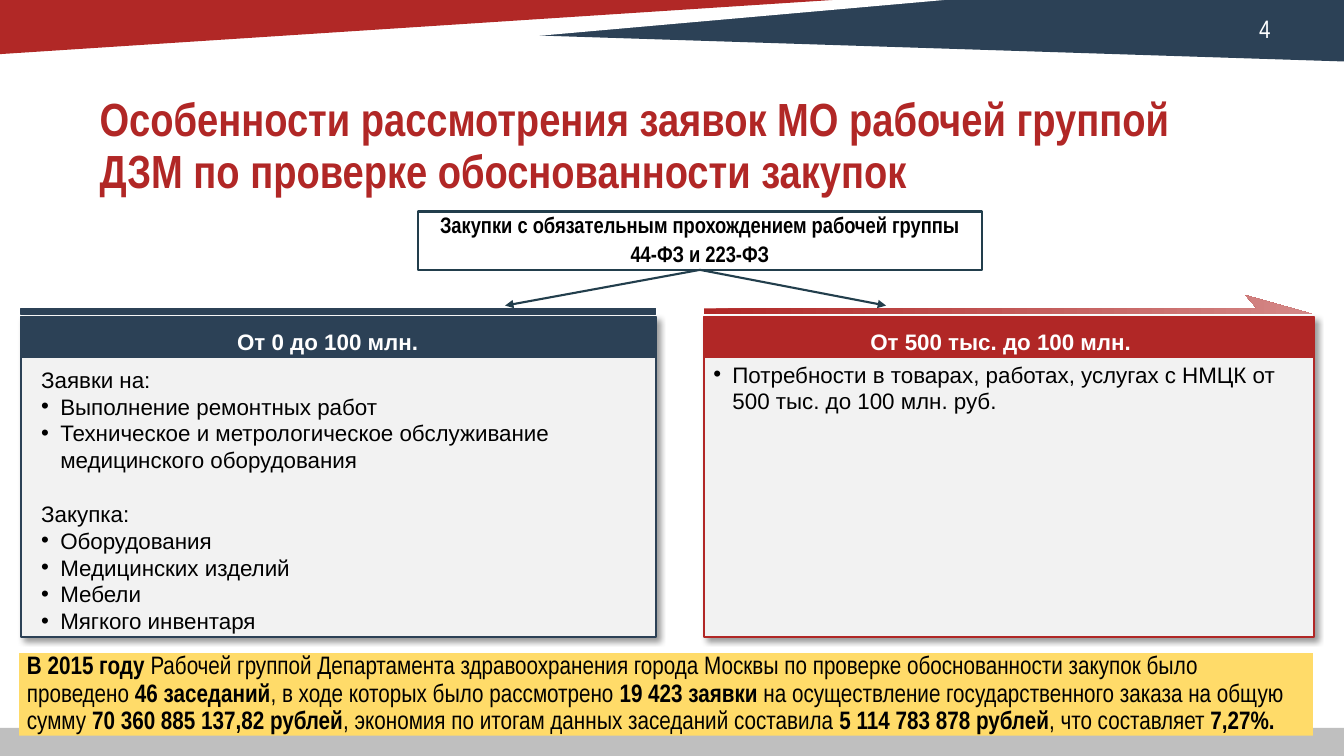
"""Build the slide on how the working group reviews purchase requests."""
from lxml.etree import SubElement
from pptx import Presentation
from pptx.dml.color import RGBColor
from pptx.enum.shapes import MSO_CONNECTOR, MSO_SHAPE
from pptx.enum.text import MSO_ANCHOR, PP_ALIGN
from pptx.oxml.ns import qn
from pptx.util import Cm, Pt

NAVY, RED, INK = "2C4156", "B12726", "223E4C"
WHITE, BLACK, PALE = "FFFFFF", "000000", "F2F2F2"
WIDE, HIGH = 33.87, 19.05

BANDS = [
    (NAVY, [(33.87, -0.13), (33.87, 1.55), (10.29, 0.79), (4.93, -0.13)]),
    (WHITE, [(-0.08, -0.1), (-0.08, 2.11), (24.94, -0.1)]),
    (WHITE, [(-0.13, -0.13), (-0.05, 2.21), (21.23, -0.1)]),
    ("B12826", [(-0.08, -0.1), (-0.08, 1.37), (22.53, -0.1)]),
]
TITLE = "Особенности рассмотрения заявок МО рабочей группой ДЗМ по проверке обоснованности закупок"
ROOT = ["Закупки с обязательным прохождением рабочей группы", "44-ФЗ и 223-ФЗ"]
PANELS = [
    {"x": 0.53, "w": 16, "color": NAVY, "head": "От 0 до 100 млн.",
     "text": (0.79, 14.94), "body": (0.79, 9.09, 15.32, 7.09), "pad": (0.25, 0.13),
     "groups": [
         ("Заявки на:", ["Выполнение ремонтных работ",
                         "Техническое и метрологическое обслуживание медицинского оборудования"]),
         ("Закупка:", ["Оборудования", "Медицинских изделий", "Мебели", "Мягкого инвентаря"])]},
    {"x": 17.75, "w": 15.37, "color": RED, "head": "От 500 тыс. до 100 млн.",
     "text": (17.98, 14.48), "body": (17.98, 9.09, 14.48, 1.37), "pad": (0, 0),
     "groups": [("", ["Потребности в товарах, работах, услугах с НМЦК от 500 тыс. до 100 млн. руб."])]},
]
FLAG = [(17.73, 7.77), (17.73, 7.92), (33.1, 7.92), (31.39, 7.44), (31.67, 7.77)]
TIPS = [(12.73, 7.7), (22.33, 7.7)]
TOTAL = [
    ("В 2015 году", True),
    (" Рабочей группой Департамента здравоохранения города Москвы по проверке "
     "обоснованности закупок было проведено ", False),
    ("46 заседаний", True),
    (", в ходе которых было рассмотрено ", False),
    ("19 423 заявки", True),
    (" на осуществление государственного заказа на общую сумму ", False),
    ("70 360 885 137,82 рублей", True),
    (", экономия по итогам данных заседаний составила ", False),
    ("5 114 783 878 рублей", True),
    (", что составляет ", False),
    ("7,27%.", True),
]


def tint(code):
    return RGBColor.from_string(code)


def paint(shape, fill, line=None, width=1.5):
    shape.shadow.inherit = False
    shape.fill.solid()
    shape.fill.fore_color.rgb = tint(fill)
    if line:
        shape.line.color.rgb = tint(line)
        shape.line.width = Pt(width)
    else:
        shape.line.fill.background()
    return shape


def rect(slide, x, y, w, h, *look):
    shape = slide.shapes.add_shape(MSO_SHAPE.RECTANGLE, Cm(x), Cm(y), Cm(w), Cm(h))
    return paint(shape, *look)


def outline(slide, points, fill):
    spots = [(Cm(x), Cm(y)) for x, y in points]
    maker = slide.shapes.build_freeform(*spots[0])
    maker.add_line_segments(spots[1:], close=True)
    return paint(maker.convert_to_shape(), fill)


def frame(shape, across=0, down=0):
    area = shape.text_frame
    area.word_wrap = True
    area.vertical_anchor = MSO_ANCHOR.TOP
    area.margin_left = area.margin_right = Cm(across)
    area.margin_top = area.margin_bottom = Cm(down)
    return area


def style(para, size, face, color, bold=False, align=PP_ALIGN.LEFT):
    para.alignment = align
    for run in para.runs:
        font = run.font
        font.size, font.name, font.bold = Pt(size), face, bold
        font.color.rgb = tint(color)


def label(slide, place, text, *look):
    box = slide.shapes.add_textbox(*[Cm(n) for n in place])
    area = frame(box)
    area.text = text
    style(area.paragraphs[0], *look)
    return area.paragraphs[0]


def shade(shape):
    drop = SubElement(shape.shadow._element.find(qn("a:effectLst")), qn("a:outerShdw"),
                      blurRad=str(Pt(4)), dist=str(Pt(3)), dir="2700000",
                      algn="tl", rotWithShape="0")
    color = SubElement(drop, qn("a:srgbClr"), val=BLACK)
    SubElement(color, qn("a:alpha"), val="40000")


def bullet(para):
    props = para._p.get_or_add_pPr()
    props.set("marL", str(Cm(0.48)))
    props.set("indent", str(-Cm(0.48)))
    SubElement(props, qn("a:buFont"), typeface="Arial")
    SubElement(props, qn("a:buChar"), char="•")


def fill_body(slide, panel):
    box = slide.shapes.add_textbox(*[Cm(n) for n in panel["body"]])
    area = frame(box, *panel["pad"])
    rows = []
    for rank, (lead, items) in enumerate(panel["groups"]):
        if lead:
            rows.append((lead, False, 19 if rank else 0))
        rows += [(item, True, 0) for item in items]
    for rank, (text, dot, gap) in enumerate(rows):
        para = area.add_paragraph() if rank else area.paragraphs[0]
        para.text = text
        if dot:
            bullet(para)
        if gap:
            para.space_before = Pt(gap)
        style(para, 16, "Arial", BLACK)


def add_panel(slide, panel):
    x, w, color = panel["x"], panel["w"], panel["color"]
    shade(rect(slide, x, 8, w, 8.05, PALE, color))
    if color == NAVY:
        rect(slide, x, 7.77, w, 0.15, NAVY, NAVY, 0.75)
    else:
        flag = outline(slide, FLAG, RED)
        flag.fill.gradient()
        flag.fill.gradient_angle = 0
        for stop, code in zip(flag.fill.gradient_stops, (RED, "D48887")):
            stop.color.rgb = tint(code)
    rect(slide, x, 8, w, 1, color, color)
    left, span = panel["text"]
    label(slide, (left, 8.26, span, 0.69), panel["head"], 16, "Arial", WHITE, True, PP_ALIGN.CENTER)
    fill_body(slide, panel)


def add_root(slide):
    root = rect(slide, 10.54, 5.33, 14.2, 1.47, WHITE, INK)
    area = frame(root, 0.2)
    area.vertical_anchor = MSO_ANCHOR.MIDDLE
    area.text = "\n".join(ROOT)
    for rank, para in enumerate(area.paragraphs):
        style(para, 16, "Arial Narrow", BLACK, True, PP_ALIGN.CENTER)
        para.line_spacing = 0.9
        if rank:
            para.space_before = Pt(3)
    for x, y in TIPS:
        link = slide.shapes.add_connector(MSO_CONNECTOR.STRAIGHT, Cm(17.64), Cm(6.8), Cm(x), Cm(y))
        link.begin_connect(root, 2)
        link.line.color.rgb = tint(INK)
        link.line.width = Pt(1.5)
        SubElement(link.line._get_or_add_ln(), qn("a:tailEnd"), type="triangle")
        SubElement(link._element.spPr, qn("a:effectLst"))


def add_total(slide):
    area = frame(rect(slide, 0.48, 16.46, 32.61, 2.08, "FFDB69"), 0.2)
    para = area.paragraphs[0]
    for text, _ in TOTAL:
        para.add_run().text = text
    style(para, 18, "Arial Narrow", BLACK)
    para.line_spacing = 0.9
    for run, (_, bold) in zip(para.runs, TOTAL):
        run.font.bold = bold


def main():
    deck = Presentation()
    deck.slide_width, deck.slide_height = Cm(WIDE), Cm(HIGH)
    slide = deck.slides.add_slide(deck.slide_layouts[6])
    for color, points in BANDS:
        outline(slide, points, color)
    rect(slide, 0, 18.34, WIDE, HIGH - 18.34, "BFBFBF")
    label(slide, (31.73, 0.33, 1.5, 0.76), "4", 18, "Arial Narrow", WHITE)
    title = label(slide, (2.51, 2.39, 29.18, 2.16), TITLE, 33.2, "Arial Narrow", RED, True)
    title.line_spacing = 0.93
    for panel in PANELS:
        add_panel(slide, panel)
    add_root(slide)
    add_total(slide)
    deck.save("out.pptx")


if __name__ == "__main__":
    main()
